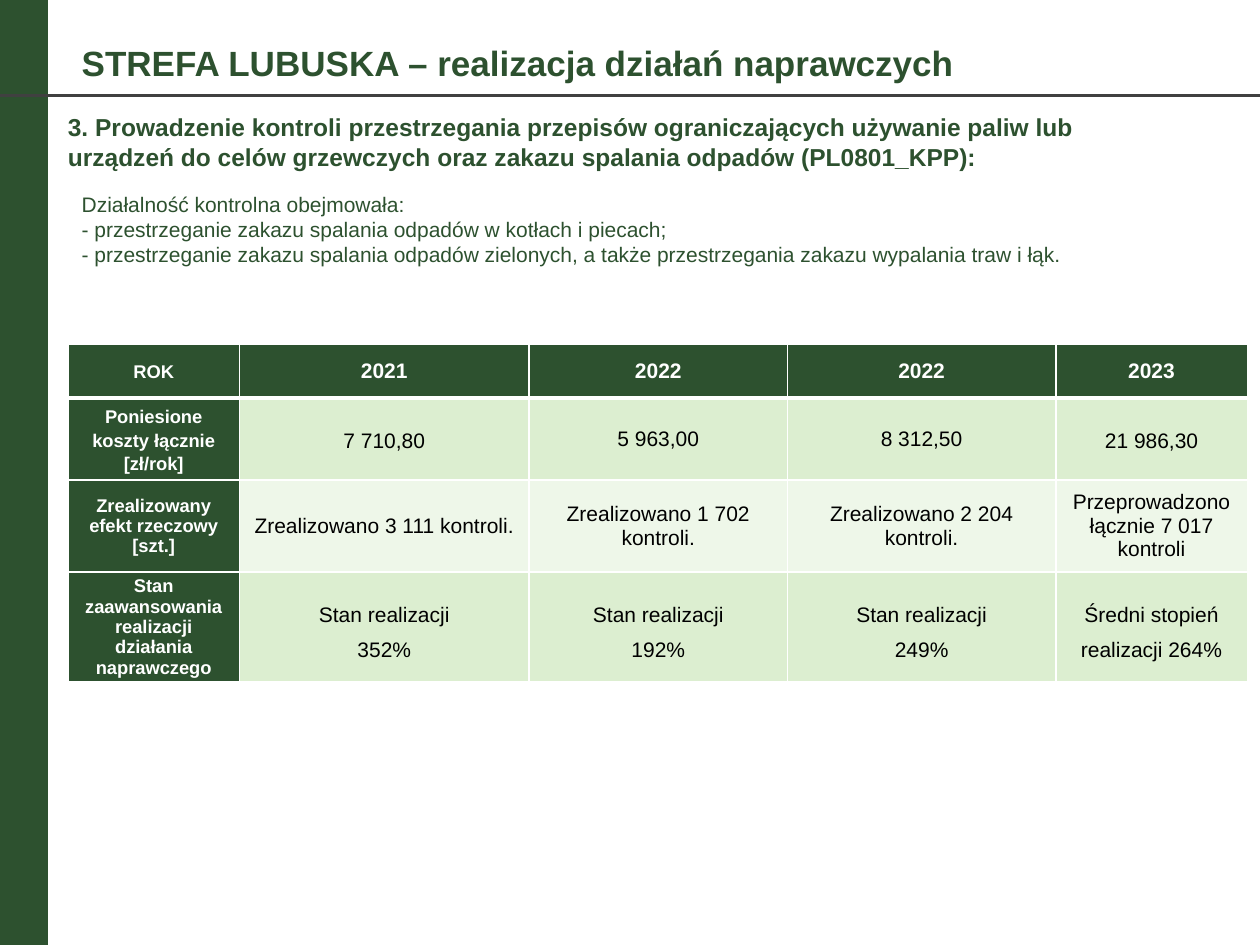
import pptx
import pptx.util
import pptx.dml.color
import pptx.enum.shapes
import pptx.enum.text
import pptx.oxml
import pptx.oxml.ns

Inches = pptx.util.Inches
Pt = pptx.util.Pt
RGBColor = pptx.dml.color.RGBColor
Align = pptx.enum.text.PP_ALIGN
Anchor = pptx.enum.text.MSO_ANCHOR

GREEN = RGBColor(0x2D, 0x51, 0x2F)
PALE = RGBColor(0xDC, 0xEE, 0xD0)
MIST = RGBColor(0xEE, 0xF7, 0xE9)
GRAY = RGBColor(0x40, 0x40, 0x40)
WHITE = RGBColor(0xFF, 0xFF, 0xFF)
BLACK = RGBColor(0, 0, 0)

COLS = [1.36, 2.3, 2.05, 2.13, 1.52]
ROWS = [0.43, 0.65, 0.73, 0.75]
CELLS = [
    ["ROK", "2021", "2022", "2022", "2023"],
    ["Poniesione koszty łącznie [zł/rok]",
     "7 710,80", "5 963,00", "8 312,50", "21 986,30"],
    ["Zrealizowany efekt rzeczowy [szt.]",
     "Zrealizowano 3 111 kontroli.", "Zrealizowano 1 702 kontroli.",
     "Zrealizowano 2 204 kontroli.", "Przeprowadzono łącznie 7 017 kontroli"],
    ["Stan zaawansowania realizacji działania naprawczego",
     "Stan realizacji\v352%", "Stan realizacji\n192%",
     "Stan realizacji\v249%", "Średni stopień realizacji 264%"],
]
LOOSE = {(0, 0), (1, 0), (1, 1), (1, 4)}
AFTER = LOOSE | {(3, 1)}


def style(frame, size, color, bold=False):
    for para in frame.paragraphs:
        for run in para.runs:
            font = run.font
            font.name = "Arial"
            font.size = Pt(size)
            font.bold = bold
            font.color.rgb = color


def add_text(slide, box, text, size, bold=False):
    shape = slide.shapes.add_textbox(*map(Inches, box))
    frame = shape.text_frame
    frame.word_wrap = True
    frame.text = text
    style(frame, size, GREEN, bold)
    return frame


def add_frame(slide, box, rule):
    bar = slide.shapes.add_shape(
        pptx.enum.shapes.MSO_SHAPE.RECTANGLE, *map(Inches, box))
    bar.shadow.inherit = False
    bar.fill.solid()
    bar.fill.fore_color.rgb = GREEN
    bar.line.fill.background()
    line = slide.shapes.add_connector(
        pptx.enum.shapes.MSO_CONNECTOR.STRAIGHT, *map(Inches, rule))
    line.line.color.rgb = GRAY
    line.line.width = Pt(1.5)
    props = line._element.spPr
    props.append(pptx.oxml.parse_xml(
        f'<a:effectLst {pptx.oxml.ns.nsdecls("a")}/>'))


def add_edge(cell, side, width):
    props = cell._tc.get_or_add_tcPr()
    props.append(pptx.oxml.parse_xml(
        f'<a:ln{side} {pptx.oxml.ns.nsdecls("a")} w="{Pt(width)}">'
        f'<a:solidFill><a:srgbClr val="{WHITE}"/></a:solidFill></a:ln{side}>'))


def fill_cell(cell, row, col):
    for side in "LRTB":
        thick = (row == 0 and side == "B") or (row == 1 and side == "T")
        add_edge(cell, side, 3 if thick else 1)
    head = row == 0 or col == 0
    cell.fill.solid()
    cell.fill.fore_color.rgb = GREEN if head else PALE if row % 2 else MIST
    cell.vertical_anchor = Anchor.MIDDLE
    cell.margin_left = cell.margin_right = Inches(0.05)
    cell.margin_top = cell.margin_bottom = 0
    frame = cell.text_frame
    frame.text = CELLS[row][col]
    for para in frame.paragraphs:
        para.alignment = Align.CENTER
        if (row, col) in LOOSE:
            para.line_spacing = 1.15
        elif row == 3 and col:
            para.line_spacing = 1.5
        if (row, col) in AFTER:
            para.space_after = Pt(8)
    style(frame, 12 if col else 10.5, WHITE if head else BLACK, head)


def add_grid(slide, left, top):
    box = (left, top, sum(COLS), sum(ROWS))
    table = slide.shapes.add_table(
        len(ROWS), len(COLS), *map(Inches, box)).table
    for col, width in zip(table.columns, COLS):
        col.width = Inches(width)
    for row, height in enumerate(ROWS):
        table.rows[row].height = Inches(height)
        for col in range(len(COLS)):
            fill_cell(table.cell(row, col), row, col)


def main():
    deck = pptx.Presentation()
    deck.slide_width = Inches(10)
    deck.slide_height = Inches(7.5)
    slide = deck.slides.add_slide(deck.slide_layouts[6])
    add_frame(slide, (-0.12, 0, 0.5, 7.64), (10.28, 0.76, -0.28, 0.76))
    add_text(slide, (0.55, 0.28, 8.7, 0.48),
             "STREFA LUBUSKA – realizacja działań naprawczych", 20, True)
    add_grid(slide, 0.54, 2.73)
    lead = add_text(
        slide, (0.44, 0.82, 9.05, 0.88),
        "3. Prowadzenie kontroli przestrzegania przepisów ograniczających "
        "używanie paliw lub urządzeń do celów grzewczych oraz zakazu "
        "spalania odpadów (PL0801_KPP):", 14, True)
    lead.margin_top = Inches(0.07)
    add_text(
        slide, (0.55, 1.47, 8.94, 0.71),
        "Działalność kontrolna obejmowała:\n"
        "- przestrzeganie zakazu spalania odpadów w kotłach i piecach;\v"
        "- przestrzeganie zakazu spalania odpadów zielonych, a także "
        "przestrzegania zakazu wypalania traw i łąk.", 12)
    deck.save("out.pptx")


if __name__ == "__main__":
    main()
